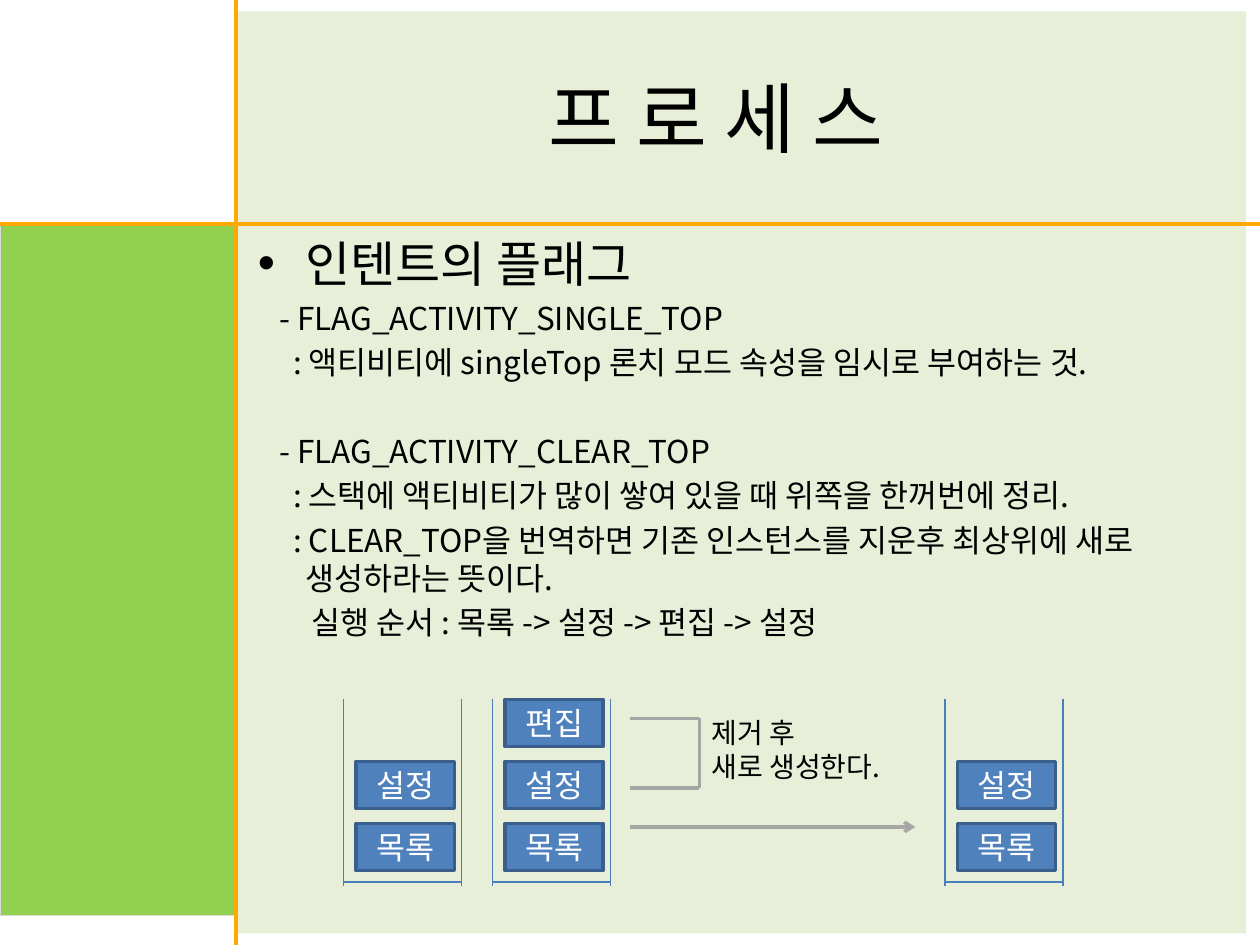
"""Build the slide on intent flags with its activity stack diagram."""
from dataclasses import dataclass

from lxml import etree
from pptx import Presentation
from pptx.dml.color import RGBColor
from pptx.enum import shapes, text
from pptx.oxml import ns
from pptx.util import Cm, Pt

FONT = "Noto Sans CJK KR"
HUES = {
    "pale": "E8EFD9", "green": "92D050", "edge": "D9D9D9", "gold": "FFA800",
    "blue": "4F81BD", "navy": "3A5F8C", "rail": "4B7EBC", "gray": "A6A6A6",
    "black": "000000", "white": "FFFFFF",
}
TOP, STEP, BASE, FOOT = 14.1, 1.25, 17.78, 17.86
WIDE = 2.38


@dataclass
class Box:
    left: float
    top: float
    width: float
    height: float


@dataclass
class Line:
    words: str
    size: float
    first: float = 0
    before: float = 3.6
    pitch: float = 21.8
    bullet: bool = False


@dataclass
class Stack:
    left: float
    items: tuple[str, ...]


@dataclass
class Rule:
    start: tuple[float, float]
    end: tuple[float, float]
    hue: str
    weight: float
    arrow: bool = False


def tint(name: str) -> RGBColor:
    """Return a named colour."""
    return RGBColor.from_string(HUES[name])


def place(box: Box) -> tuple:
    """Return the box as lengths."""
    return Cm(box.left), Cm(box.top), Cm(box.width), Cm(box.height)


def write(para, words: str, size: float, hue: str = "black") -> None:
    """Add one run of text to a paragraph."""
    run = para.add_run()
    run.text = words
    run.font.size = Pt(size)
    run.font.color.rgb = tint(hue)
    run.font.name = FONT
    etree.SubElement(run.font._element, ns.qn("a:ea"), typeface=FONT)


def block(slide, box: Box, fill: str, edge: str = "", weight: float = 0):
    """Draw a filled rectangle."""
    shape = slide.shapes.add_shape(shapes.MSO_SHAPE.RECTANGLE, *place(box))
    shape.shadow.inherit = False
    shape.fill.solid()
    shape.fill.fore_color.rgb = tint(fill)
    if edge:
        shape.line.color.rgb = tint(edge)
        shape.line.width = Pt(weight)
    else:
        shape.line.fill.background()
    return shape


def draw(slide, rule: Rule) -> None:
    """Draw a straight line, with an arrowhead if asked."""
    ends = [Cm(value) for value in (*rule.start, *rule.end)]
    link = slide.shapes.add_connector(shapes.MSO_CONNECTOR.STRAIGHT, *ends)
    link.line.color.rgb = tint(rule.hue)
    link.line.width = Pt(rule.weight)
    if rule.arrow:
        etree.SubElement(link.line._get_or_add_ln(), ns.qn("a:tailEnd"), type="arrow")
    etree.SubElement(link._element.spPr, ns.qn("a:effectLst"))


def frame(slide, box: Box):
    """Add a wrapping text box and return its frame."""
    body = slide.shapes.add_textbox(*place(box)).text_frame
    body.word_wrap = True
    return body


def fill(body, lines: list[Line], margin: float = 0) -> None:
    """Write lines with hanging indents into a text frame."""
    for spot, line in enumerate(lines):
        para = body.add_paragraph() if spot else body.paragraphs[0]
        para.space_before = Pt(line.before)
        para.line_spacing = Pt(line.pitch)
        props = para._p.get_or_add_pPr()
        props.set("marL", str(Cm(margin)))
        props.set("indent", str(Cm(line.first - margin)))
        if line.bullet:
            etree.SubElement(props, ns.qn("a:buFont"), typeface="Arial")
            etree.SubElement(props, ns.qn("a:buChar"), char="•")
        write(para, line.words, line.size)


def pile(slide, stack: Stack) -> None:
    """Draw an open stack with its items from the bottom up."""
    left, right = stack.left, stack.left + WIDE
    for level, name in enumerate(stack.items):
        top = TOP + (2 - level) * STEP
        shape = block(slide, Box(left + 0.25, top, 1.98, 0.95), "blue", "navy", 2)
        body = shape.text_frame
        body.margin_top = body.margin_bottom = 0
        body.vertical_anchor = text.MSO_ANCHOR.MIDDLE
        body.paragraphs[0].alignment = text.PP_ALIGN.CENTER
        write(body.paragraphs[0], name, 18, "white")
    for start, end in (
        ((left, TOP), (left, FOOT)),
        ((right, TOP), (right, FOOT)),
        ((left, BASE), (right, BASE)),
    ):
        draw(slide, Rule(start, end, "rail", 0.75))


def main() -> None:
    """Build and save the slide."""
    deck = Presentation()
    deck.slide_width, deck.slide_height = Cm(25.4), Cm(19.05)
    slide = deck.slides.add_slide(deck.slide_layouts[6])

    block(slide, Box(4.75, 0.23, 20.37, 18.59), "pale")
    block(slide, Box(0, 4.55, 4.75, 13.9), "green", "edge", 0.25)
    draw(slide, Rule((0, 4.52), (25.4, 4.52), "gold", 2))
    draw(slide, Rule((4.76, 0), (4.76, 19.05), "gold", 2))

    head = frame(slide, Box(4.75, 0.76, 19.38, 3.18))
    head.vertical_anchor = text.MSO_ANCHOR.MIDDLE
    head.paragraphs[0].alignment = text.PP_ALIGN.CENTER
    write(head.paragraphs[0], "프 로 세 스", 44)

    dash, colon = 0.43, 0.71
    fill(frame(slide, Box(4.95, 4.57, 19.46, 12.3)), [
        Line("인텐트의 플래그", 28, before=0, pitch=34, bullet=True),
        Line("- FLAG_ACTIVITY_SINGLE_TOP", 18, dash),
        Line(": 액티비티에 singleTop 론치 모드 속성을 임시로 부여하는 것.", 18, colon),
        Line("- FLAG_ACTIVITY_CLEAR_TOP", 18, dash, before=28.8),
        Line(": 스택에 액티비티가 많이 쌓여 있을 때 위쪽을 한꺼번에 정리.", 18, colon),
        Line(": CLEAR_TOP을 번역하면 기존 인스턴스를 지운후 최상위에 새로 "
             "생성하라는 뜻이다.", 18, colon),
        Line("실행 순서 : 목록 -> 설정 -> 편집 -> 설정", 18, 1.09),
    ], 0.96)

    for stack in (
        Stack(6.93, ("목록", "설정")),
        Stack(9.93, ("목록", "설정", "편집")),
        Stack(19.05, ("목록", "설정")),
    ):
        pile(slide, stack)

    near, far, high, low = 12.7, 14.1, 14.48, 15.88
    for start, end in (
        ((near, high), (far, high)),
        ((far, high), (far, low)),
        ((far, low), (near, low)),
    ):
        draw(slide, Rule(start, end, "gray", 2))
    draw(slide, Rule((near, 16.67), (18.45, 16.67), "gray", 2, True))
    fill(frame(slide, Box(far, 14.3, 4.57, 1.63)), [
        Line("제거 후", 16, before=0, pitch=19.2),
        Line("새로 생성한다.", 16, before=0, pitch=19.2),
    ])
    deck.save("out.pptx")


if __name__ == "__main__":
    main()
